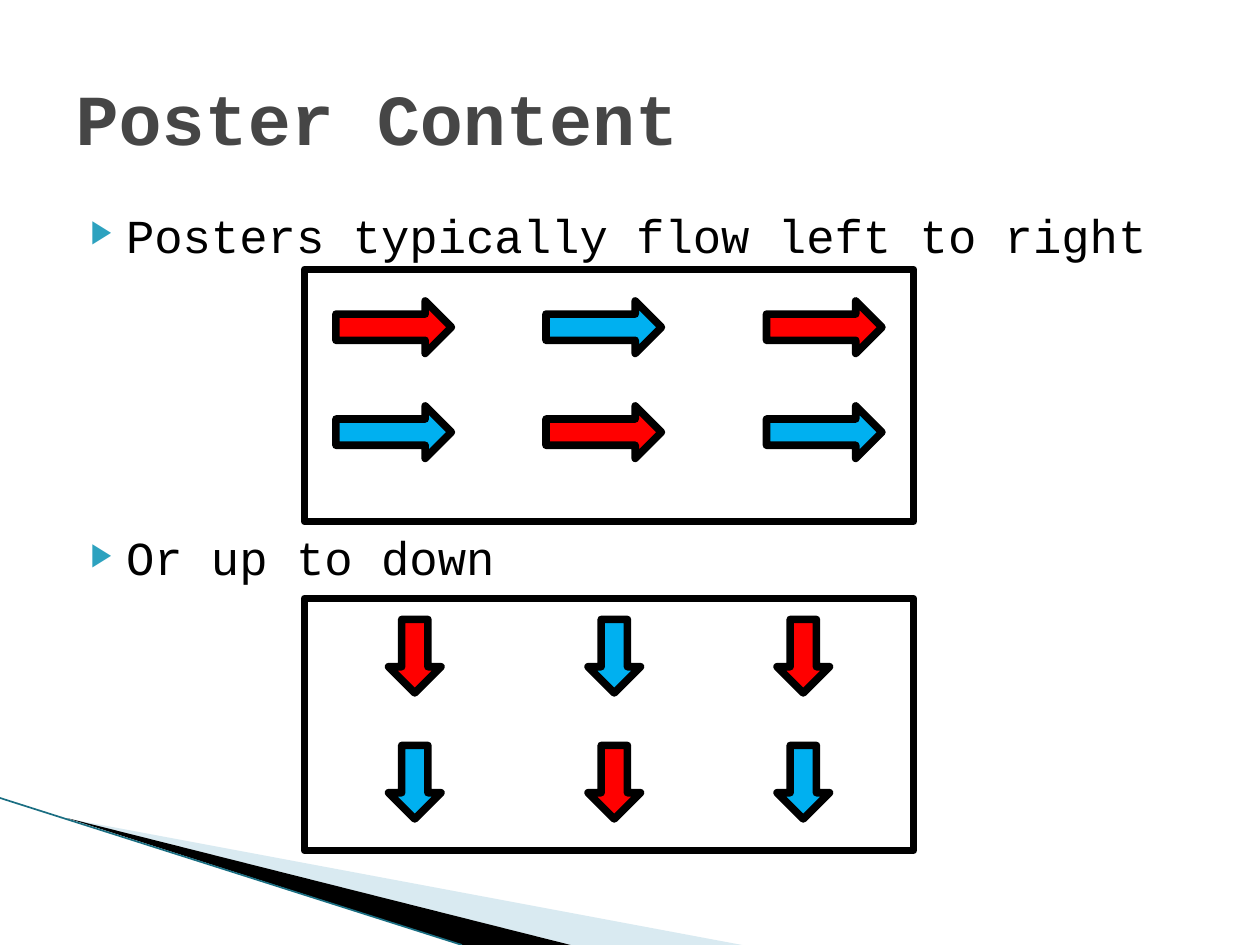
from lxml.etree import SubElement
from pptx import Presentation
from pptx.dml.color import RGBColor
from pptx.enum.shapes import MSO_CONNECTOR, MSO_SHAPE
from pptx.enum.text import MSO_ANCHOR, MSO_AUTO_SIZE, PP_ALIGN
from pptx.oxml.ns import qn
from pptx.util import Pt

FONT = "Courier New"
RED, BLUE, BLACK, WHITE = "FF0000", "00B0F0", "000000", "FFFFFF"


def color(hex_code):
    """Turn a hex string into a colour."""
    return RGBColor.from_string(hex_code)


def place(sp, box):
    """Move and size a shape to a box in points."""
    sp.left, sp.top, sp.width, sp.height = (Pt(v) for v in box)


def write(p, text, size, hex_code=BLACK, bold=False, before=0):
    """Write one formatted left-aligned paragraph."""
    p.alignment = PP_ALIGN.LEFT
    p.space_before = Pt(before)
    r = p.add_run()
    r.text = text
    r.font.name, r.font.size, r.font.bold = FONT, Pt(size), bold
    r.font.color.rgb = color(hex_code)


def add_bullet(p):
    """Give a paragraph a hanging triangle bullet."""
    pPr = p._p.get_or_add_pPr()
    pPr.set("marL", str(Pt(28.8)))
    pPr.set("indent", str(Pt(-20.16)))
    SubElement(SubElement(pPr, qn("a:buClr")), qn("a:srgbClr"), val="2DA2BF")
    SubElement(pPr, qn("a:buSzPct"), val="68000")
    SubElement(pPr, qn("a:buFont"), typeface=FONT)
    SubElement(pPr, qn("a:buChar"), char="▶")


def add_title(s, box, text):
    """Fill the title placeholder."""
    sp = s.shapes.title
    place(sp, box)
    tf = sp.text_frame
    tf.auto_size, tf.vertical_anchor = MSO_AUTO_SIZE.NONE, MSO_ANCHOR.MIDDLE
    write(tf.paragraphs[0], text, 41, "464646", bold=True)


def add_body(s, box, items, gap):
    """Fill the body placeholder with bullets set apart by a gap."""
    sp = s.placeholders[1]
    place(sp, box)
    tf = sp.text_frame
    tf.auto_size, tf.vertical_anchor = MSO_AUTO_SIZE.NONE, MSO_ANCHOR.TOP
    for i, text in enumerate(items):
        p = tf.add_paragraph() if i else tf.paragraphs[0]
        add_bullet(p)
        write(p, text, 27, before=gap if i else 0)


def add_outlined(s, kind, box, fill):
    """Add a filled shape with a heavy black outline."""
    sp = s.shapes.add_shape(kind, *(Pt(v) for v in box))
    sp.shadow.inherit = False
    sp.fill.solid()
    sp.fill.fore_color.rgb = color(fill)
    sp.line.color.rgb = color(BLACK)
    sp.line.width = Pt(4.33)
    return sp


def add_poster(s, box, columns, rows, size, rotation=0):
    """Draw a poster frame with a checkered grid of arrows inside."""
    left, top = box[:2]
    add_outlined(s, MSO_SHAPE.RECTANGLE, box, WHITE)
    for i, y in enumerate(rows):
        for j, x in enumerate(columns):
            fill = BLUE if (i + j) % 2 else RED
            arrow = add_outlined(s, MSO_SHAPE.RIGHT_ARROW, (left + x, top + y, *size), fill)
            arrow.rotation = rotation


def add_wedge(s, points, fill, alpha=100):
    """Draw a borderless polygon with an opacity in percent."""
    start, *rest = [(Pt(x), Pt(y)) for x, y in points]
    builder = s.shapes.build_freeform(*start)
    builder.add_line_segments(rest, close=True)
    sp = builder.convert_to_shape()
    sp.shadow.inherit = False
    sp.fill.solid()
    sp.fill.fore_color.rgb = color(fill)
    sp.line.fill.background()
    if alpha < 100:
        tint = sp.fill._xPr.find(".//" + qn("a:srgbClr"))
        SubElement(tint, qn("a:alpha"), val=str(alpha * 1000))


def add_corner(s, box):
    """Draw the swoosh in the lower left corner."""
    left, top, width, height = box
    bottom = top + height
    add_wedge(s, [(left + 39.6, top + 12), (left + 424, bottom), (left + 326, bottom)], "A0CBDC", 40)
    add_wedge(s, [(left + 38.2, top + 11.5), (left + 326, bottom), (left + width, bottom)], BLACK)
    edge = s.shapes.add_connector(
        MSO_CONNECTOR.STRAIGHT, Pt(left), Pt(top), Pt(left + width), Pt(bottom))
    edge.line.color.rgb = color("1A6E82")
    edge.line.width = Pt(0.95)
    SubElement(edge._element.spPr, qn("a:effectLst"))


def main():
    """Build the slide and save it."""
    prs = Presentation()
    prs.slide_width, prs.slide_height = Pt(720), Pt(540)
    s = prs.slides.add_slide(prs.slide_layouts[1])
    add_corner(s, (0, 456, 264, 84))
    add_title(s, (36, 21.6, 648, 90), "Poster Content")
    add_body(s, (36, 114.2, 648, 358),
             ["Posters typically flow left to right", "Or up to down"], 151.7)
    add_poster(s, (174, 154, 348, 144), (18, 138, 264), (18, 78), (66, 30))
    add_poster(s, (174, 342, 348, 144), (42, 156, 264), (18, 90), (42, 30), 90)
    prs.save("out.pptx")


if __name__ == "__main__":
    main()
